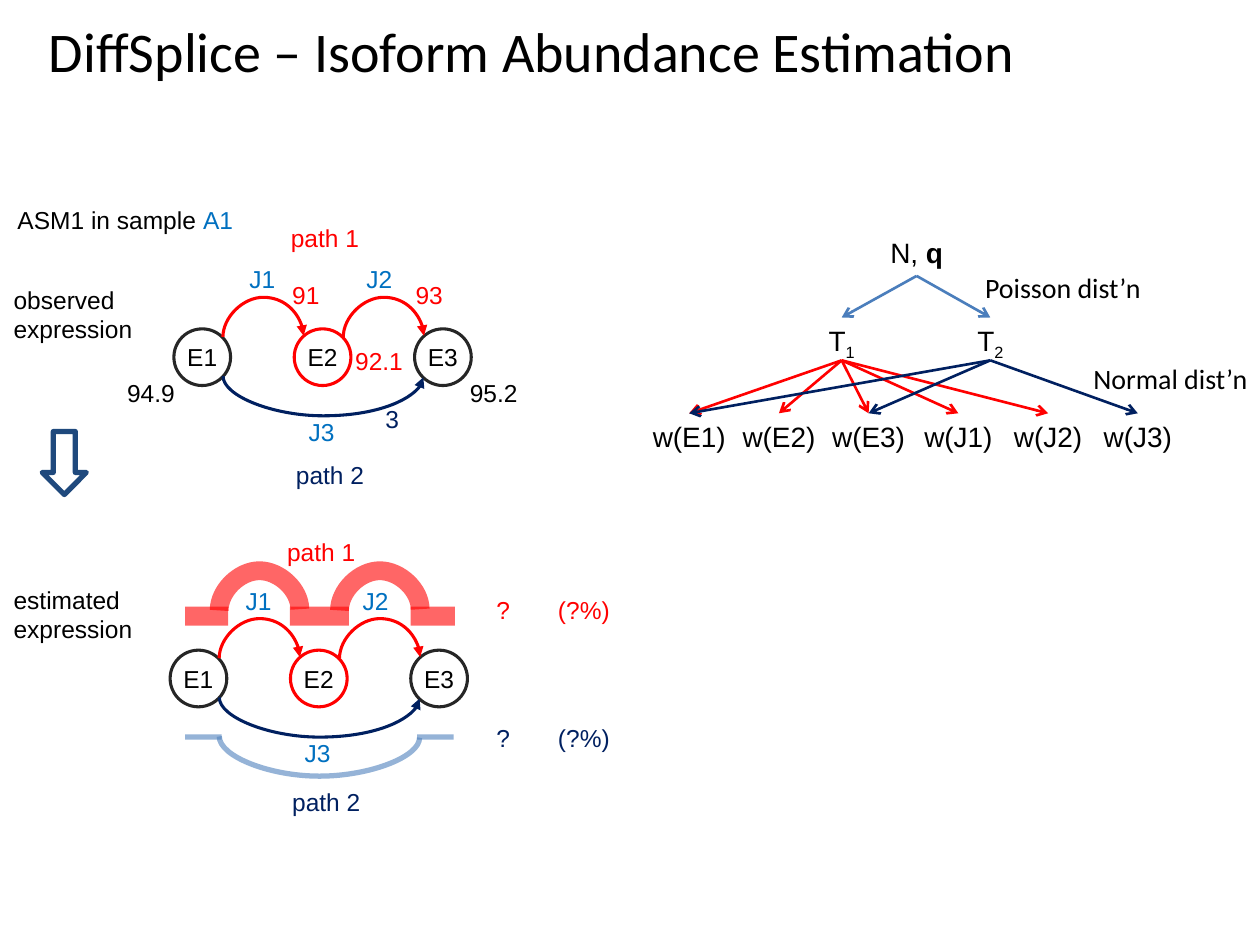
from dataclasses import dataclass

from lxml import etree
from pptx import Presentation
from pptx.dml.color import RGBColor
from pptx.enum.shapes import MSO_CONNECTOR, MSO_SHAPE
from pptx.enum.text import MSO_ANCHOR, PP_ALIGN
from pptx.oxml.ns import qn
from pptx.util import Inches, Pt

STRAIGHT, CURVE = MSO_CONNECTOR.STRAIGHT, MSO_CONNECTOR.CURVE
ELLIPSE, RIGHT_ARROW = MSO_SHAPE.OVAL, MSO_SHAPE.RIGHT_ARROW
LEFT, CENTER = PP_ALIGN.LEFT, PP_ALIGN.CENTER
TOP, MIDDLE = MSO_ANCHOR.TOP, MSO_ANCHOR.MIDDLE
TOP_SIDE, BOTTOM_SIDE = 0, 2

BLACK, WHITE, GRAY = "000000", "FFFFFF", "262626"
RED, NAVY, SKY = "FF0000", "002060", "0070C0"
STEEL, TREE_BLUE, ARROW_BLUE = "4F81BD", "4B7EBC", "1F497D"

NODE_SIZE = 0.45
NODE_STEP = 1.91 / 2
SHORT_SPAN, LONG_SPAN = 0.64, 1.59
ARC_RISE, ARC_DEPTH = 0.01, 0.32


@dataclass
class Label:
    text: str
    left: float
    top: float
    width: float
    color: str = BLACK
    height: float = 0.34
    size: int = 14
    font: str = "Arial"
    align: PP_ALIGN = LEFT
    anchor: MSO_ANCHOR = TOP
    wrap: bool = False


@dataclass
class Stroke:
    color: str
    width: float
    head: str = ""
    opacity: int = 100


def rgb(color: str) -> RGBColor:
    return RGBColor.from_string(color)


def style_run(run, size, color, font="Arial"):
    run.font.size = Pt(size)
    run.font.name = font
    run.font.color.rgb = rgb(color)


def add_label(slide, label: Label):
    box = slide.shapes.add_textbox(
        Inches(label.left), Inches(label.top), Inches(label.width), Inches(label.height))
    frame = box.text_frame
    frame.word_wrap = label.wrap
    frame.vertical_anchor = label.anchor
    frame.text = label.text
    paragraph = frame.paragraphs[0]
    paragraph.alignment = label.align
    style_run(paragraph.runs[0], label.size, label.color, label.font)
    return box


def append_run(box, text, size, color=BLACK):
    run = box.text_frame.paragraphs[0].add_run()
    run.text = text
    style_run(run, size, color)
    return run


def add_line(slide, start, end, stroke: Stroke, kind=STRAIGHT):
    connector = slide.shapes.add_connector(kind, *(Inches(value) for value in (*start, *end)))
    connector.line.color.rgb = rgb(stroke.color)
    connector.line.width = Pt(stroke.width)
    properties = connector._element.spPr
    line = properties.find(qn("a:ln"))
    if stroke.opacity < 100:
        color = line.find(".//" + qn("a:srgbClr"))
        etree.SubElement(color, qn("a:alpha"), val=str(stroke.opacity * 1000))
    if stroke.head:
        etree.SubElement(line, qn("a:tailEnd"), type=stroke.head)
    etree.SubElement(properties, qn("a:effectLst"))
    return connector


def add_arc(slide, left, top, span, stroke: Stroke, upward: bool):
    """Draw a curved connector turned on its side, running left to right."""
    x = left + (span - ARC_RISE) / 2
    y = top - span / 2
    connector = add_line(slide, (x, y), (x + ARC_RISE, y + span), stroke, CURVE)
    connector.rotation = 90 if upward else 270
    properties = connector._element.spPr
    transform = properties.find(qn("a:xfrm"))
    transform.set("rot", str((90 if upward else 270) * 60000))
    transform.set("flipH", "1")
    if upward:
        transform.set("flipV", "1")
    geometry = properties.find(qn("a:prstGeom"))
    adjustments = geometry.find(qn("a:avLst"))
    if adjustments is None:
        adjustments = etree.SubElement(geometry, qn("a:avLst"))
    depth = round(ARC_DEPTH / ARC_RISE * 100000)
    etree.SubElement(adjustments, qn("a:gd"), name="adj1", fmla=f"val {depth}")


def add_node(slide, name, left, top, color, filled):
    node = slide.shapes.add_shape(
        ELLIPSE, Inches(left), Inches(top), Inches(NODE_SIZE), Inches(NODE_SIZE))
    node.shadow.inherit = False
    if filled:
        node.fill.solid()
        node.fill.fore_color.rgb = rgb(WHITE)
    else:
        node.fill.background()
    node.line.color.rgb = rgb(color)
    node.line.width = Pt(1.75)
    frame = node.text_frame
    frame.margin_left = frame.margin_right = frame.margin_top = frame.margin_bottom = 0
    frame.vertical_anchor = MIDDLE
    frame.text = name
    frame.paragraphs[0].alignment = CENTER
    style_run(frame.paragraphs[0].runs[0], 14, BLACK)


def add_splice_graph(slide, left, top):
    for index, color in enumerate((GRAY, RED, GRAY)):
        add_node(slide, f"E{index + 1}", left + index * NODE_STEP, top, color, color == RED)
    for index in range(2):
        add_arc(slide, left + 0.39 + index * NODE_STEP, top + 0.06, SHORT_SPAN,
                Stroke(RED, 1.75, "triangle"), True)
    add_arc(slide, left + 0.39, top + 0.38, LONG_SPAN, Stroke(NAVY, 1.75, "triangle"), False)
    for name, x, y in (("J1", 0.5, -0.56), ("J2", 1.43, -0.56), ("J3", 0.97, 0.65)):
        add_label(slide, Label(name, left + x, top + y, 0.41, SKY))


def add_path_bands(slide):
    red_band = Stroke(RED, 10.75, opacity=60)
    blue_band = Stroke(STEEL, 3, opacity=60)
    for index in range(2):
        add_arc(slide, 1.74 + index * NODE_STEP, 4.84, SHORT_SPAN, red_band, True)
    add_arc(slide, 1.74, 5.85, LONG_SPAN, blue_band, False)
    for start, end, y, band in (
            (3.26, 3.61, 4.89, red_band), (2.3, 2.77, 4.89, red_band),
            (1.47, 1.81, 4.89, red_band), (3.31, 3.6, 5.85, blue_band),
            (1.47, 1.76, 5.85, blue_band)):
        add_line(slide, (start, y), (end, y), band)


def add_tree(slide):
    def tree_label(text, left, top, width, height=0.34):
        return add_label(slide, Label(text, left, top, width, height=height, size=16,
                                      align=CENTER, wrap=True))

    def link(parent, child, color):
        connector = add_line(slide, (0, 0), (1, 1), Stroke(color, 1.5, "arrow"))
        connector.begin_connect(parent, BOTTOM_SIDE)
        connector.end_connect(child, TOP_SIDE)

    root = tree_label("N, ", 6.93, 1.82, 0.69, 0.37)
    append_run(root, "q", 16).font.bold = True
    leaves = [tree_label(f"w({name})", 5.03 + index * 3.56 / 5, 3.28, 0.88)
              for index, name in enumerate(("E1", "E2", "E3", "J1", "J2", "J3"))]
    branches = ((6.37, RED, (0, 1, 2, 3, 4)), (7.55, NAVY, (5, 2, 0)))
    for number, (left, color, targets) in enumerate(branches, start=1):
        transcript = tree_label("T", left, 2.52, 0.62)
        subscript = append_run(transcript, str(number), 16)
        subscript.font._element.set("baseline", "-25000")
        for target in targets:
            link(transcript, leaves[target], color)
        link(root, transcript, TREE_BLUE)
    for text, left, top in (("Poisson dist’n", 7.72, 2.1), ("Normal dist’n", 8.58, 2.82)):
        add_label(slide, Label(text, left, top, 1.44, height=0.37, size=16, font="Calibri"))


def main():
    presentation = Presentation()
    presentation.slide_width, presentation.slide_height = Inches(10), Inches(7.5)
    slide = presentation.slides.add_slide(presentation.slide_layouts[6])

    # Title and sample heading
    add_label(slide, Label("DiffSplice – Isoform Abundance Estimation", 0.29, 0, 9.71,
                           height=0.79, size=32, font="Calibri", anchor=MIDDLE, wrap=True))
    sample = add_label(slide, Label("ASM1 in sample ", 0.04, 1.58, 1.96, wrap=True))
    append_run(sample, "A1", 14, SKY)

    # Observed and estimated graphs
    add_splice_graph(slide, 1.38, 2.61)
    add_splice_graph(slide, 1.35, 5.16)
    add_path_bands(slide)
    for text, top in (("observed expression", 2.21), ("estimated expression", 4.59)):
        add_label(slide, Label(text, 0.01, top, 1.2, height=0.57, wrap=True))
    for label in (
            Label("path 1", 2.21, 1.72, 0.75, RED), Label("path 2", 2.25, 3.6, 0.75, NAVY),
            Label("path 1", 2.18, 4.21, 0.75, RED), Label("path 2", 2.22, 6.2, 0.75, NAVY),
            Label("91", 2.22, 2.17, 0.42, RED), Label("93", 3.2, 2.17, 0.42, RED),
            Label("92.1", 2.72, 2.7, 0.58, RED), Label("3", 2.96, 3.16, 0.31, NAVY),
            Label("94.9", 0.91, 2.95, 0.58), Label("95.2", 3.63, 2.95, 0.58)):
        add_label(slide, label)
    for top, color in ((4.67, RED), (5.69, NAVY)):
        add_label(slide, Label("?", 3.84, top, 0.31, color))
        add_label(slide, Label("(?%)", 4.33, top, 0.62, color))

    # Arrow from observed to estimated
    arrow = slide.shapes.add_shape(
        RIGHT_ARROW, Inches(0.26), Inches(3.5), Inches(0.5), Inches(0.35))
    arrow.rotation = 90
    arrow.shadow.inherit = False
    arrow.fill.solid()
    arrow.fill.fore_color.rgb = rgb(WHITE)
    arrow.line.color.rgb = rgb(ARROW_BLUE)
    arrow.line.width = Pt(3)

    # Distribution tree
    add_tree(slide)
    presentation.save("out.pptx")


if __name__ == "__main__":
    main()
